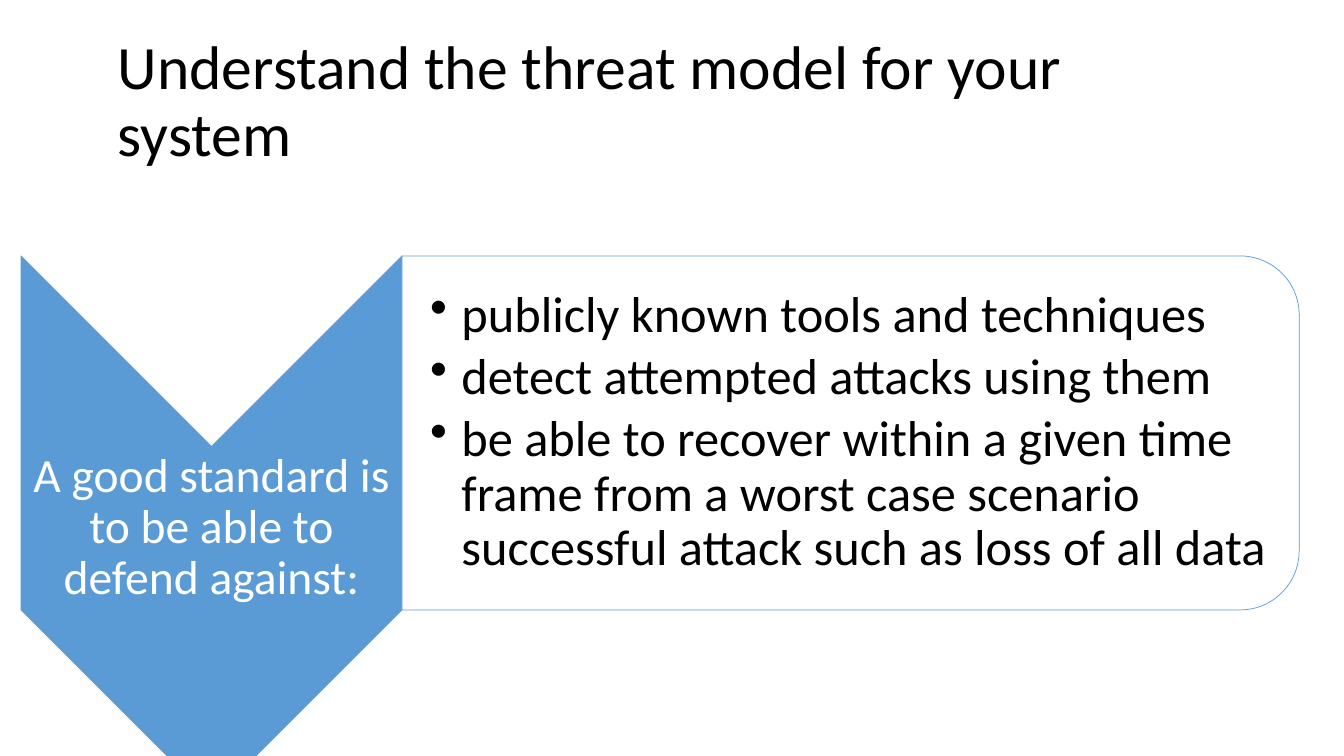
from lxml import etree
from pptx import Presentation
from pptx.dml.color import RGBColor
from pptx.enum.shapes import MSO_SHAPE
from pptx.enum.text import MSO_ANCHOR, PP_ALIGN
from pptx.oxml.ns import qn
from pptx.util import Cm, Pt

# Content
TITLE = "Understand the threat model for your system"
STANDARD = "A good standard is to be able to defend against:"
THREATS = [
    "publicly known tools and techniques",
    "detect attempted attacks using them",
    "be able to recover within a given time frame from a worst case scenario "
    "successful attack such as loss of all data",
]

# Format
FONT = "Calibri"
BLACK = RGBColor(0x00, 0x00, 0x00)
WHITE = RGBColor(0xFF, 0xFF, 0xFF)
BLUE = RGBColor(0x5B, 0x9B, 0xD5)
CHEVRON = MSO_SHAPE.CHEVRON
CARD = MSO_SHAPE.ROUND_2_SAME_RECTANGLE
MIDDLE = MSO_ANCHOR.MIDDLE
LEFT, CENTER = PP_ALIGN.LEFT, PP_ALIGN.CENTER

# Layout in centimetres: the chevron and the card share one top edge
TOP = 6.45
CHEVRON_LEFT, CHEVRON_WIDTH, CHEVRON_HEIGHT = 0.53, 9.6, 13.72
CARD_LEFT, CARD_WIDTH, CARD_HEIGHT = CHEVRON_LEFT + CHEVRON_WIDTH, 22.61, 8.92
STANDARD_HEIGHT = 4.11
STANDARD_TOP = TOP + (CHEVRON_HEIGHT - STANDARD_HEIGHT) / 2
THREATS_WIDTH, THREATS_HEIGHT = 22.17, 8.05
THREATS_TOP = TOP + (CARD_HEIGHT - THREATS_HEIGHT) / 2
BULLET_INDENT = 0.79


def add_turned_shape(slide, kind, left, top, width, height, fill):
    """Add a shape turned by 90 degrees that covers the given area."""
    shape = slide.shapes.add_shape(
        kind,
        Cm(left + (width - height) / 2), Cm(top + (height - width) / 2),
        Cm(height), Cm(width),
    )
    shape.rotation = 90
    shape.shadow.inherit = False
    shape.fill.solid()
    shape.fill.fore_color.rgb = fill
    shape.line.color.rgb = BLUE
    shape.line.width = Pt(0.5)
    return shape


def add_bullet(paragraph):
    properties = paragraph._p.get_or_add_pPr()
    properties.set("marL", str(Cm(BULLET_INDENT)))
    properties.set("indent", str(-Cm(BULLET_INDENT)))
    etree.SubElement(properties, qn("a:buChar")).set("char", "•")


def add_text(slide, lines, area, *, size, color=BLACK, align=LEFT,
             insets=(0.25, 0.13, 0.25, 0.13), space_after=0, bullets=False):
    box = slide.shapes.add_textbox(*(Cm(length) for length in area))
    frame = box.text_frame
    frame.word_wrap = True
    frame.vertical_anchor = MIDDLE
    (frame.margin_left, frame.margin_top,
     frame.margin_right, frame.margin_bottom) = (Cm(inset) for inset in insets)
    for number, line in enumerate(lines):
        paragraph = frame.add_paragraph() if number else frame.paragraphs[0]
        paragraph.alignment = align
        paragraph.line_spacing = 0.9
        paragraph.space_after = Pt(space_after)
        if bullets:
            add_bullet(paragraph)
        run = paragraph.add_run()
        run.text = line
        run.font.name = FONT
        run.font.size = Pt(size)
        run.font.color.rgb = color


def main():
    presentation = Presentation()
    presentation.slide_width = Cm(33.87)
    presentation.slide_height = Cm(19.05)
    slide = presentation.slides.add_slide(presentation.slide_layouts[6])

    # Title
    add_text(slide, [TITLE], (2.72, 0.76, 25.81, 3.68), size=44)

    # Chevron with the standard
    add_turned_shape(slide, CHEVRON, CHEVRON_LEFT, TOP,
                     CHEVRON_WIDTH, CHEVRON_HEIGHT, BLUE)
    add_text(slide, [STANDARD],
             (CHEVRON_LEFT, STANDARD_TOP, CHEVRON_WIDTH, STANDARD_HEIGHT),
             size=34, color=WHITE, align=CENTER, insets=(0.05,) * 4,
             space_after=12)

    # Card with the threats
    card = add_turned_shape(slide, CARD, CARD_LEFT, TOP,
                            CARD_WIDTH, CARD_HEIGHT, WHITE)
    card_color = card._element.spPr.find(qn("a:solidFill"))[0]
    etree.SubElement(card_color, qn("a:alpha")).set("val", "90000")
    add_text(slide, THREATS,
             (CARD_LEFT, THREATS_TOP, THREATS_WIDTH, THREATS_HEIGHT),
             size=36, insets=(0.71, 0.08, 0.08, 0.08), space_after=5.4,
             bullets=True)

    presentation.save("out.pptx")


if __name__ == "__main__":
    main()
